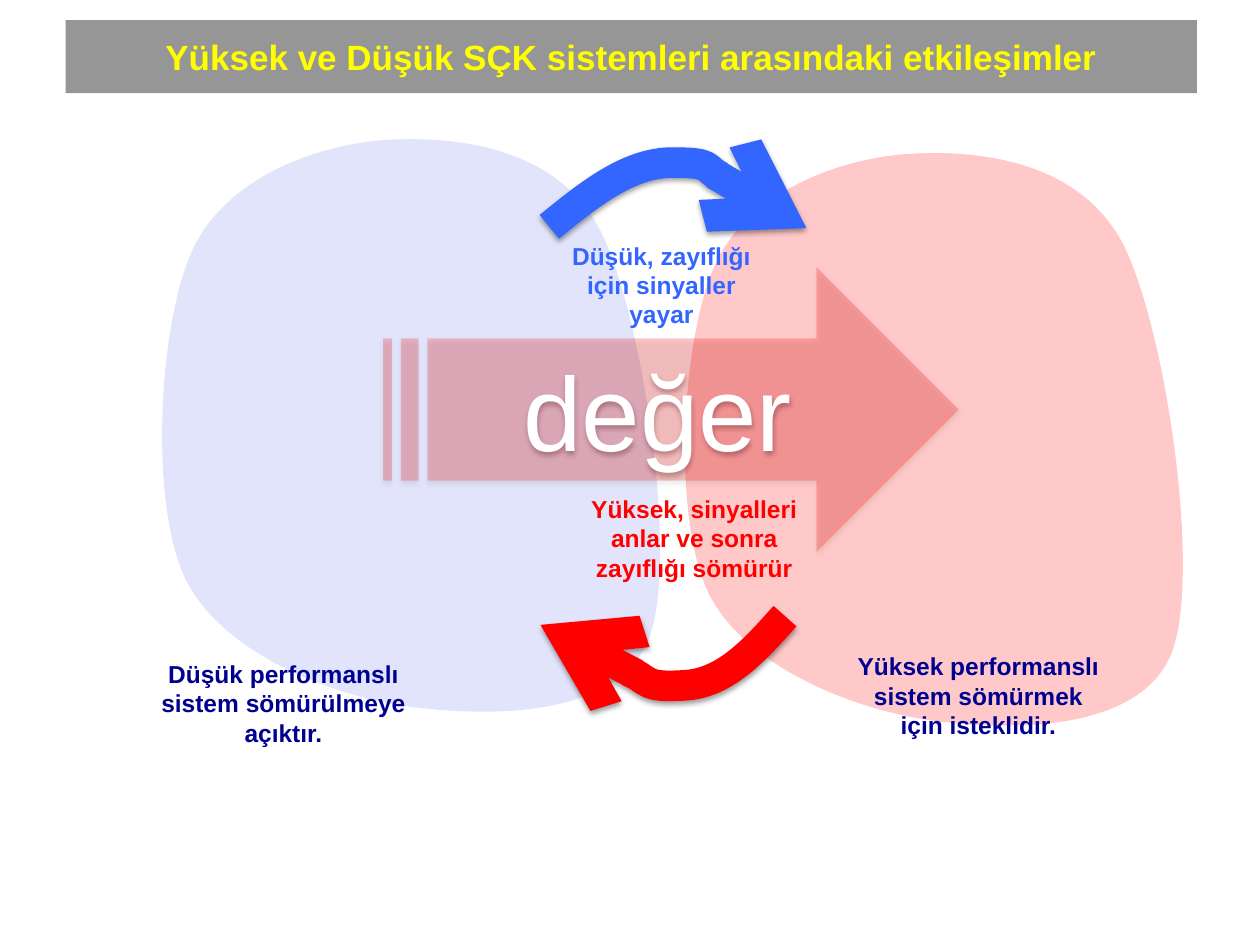
from lxml import etree
from pptx import Presentation
from pptx.dml.color import RGBColor
from pptx.enum.shapes import MSO_SHAPE
from pptx.enum.text import MSO_ANCHOR, MSO_AUTO_SIZE, PP_ALIGN
from pptx.oxml.ns import qn
from pptx.util import Pt

PX = 9144
RECT = MSO_SHAPE.RECTANGLE
STRIPED = MSO_SHAPE.STRIPED_RIGHT_ARROW
CENTER = PP_ALIGN.CENTER
MIDDLE = MSO_ANCHOR.MIDDLE
GROW = MSO_AUTO_SIZE.SHAPE_TO_FIT_TEXT

BLUE, RED, NAVY = "3366FF", "FF0000", "000090"
BLOB = [
    (308, 111), (361, 108), (441, 116), (476, 182), (510, 248), (539, 444),
    (515, 507), (490, 570), (388, 569), (326, 561), (265, 553), (176, 519),
    (147, 459), (118, 398), (126, 256), (153, 198), (180, 140), (254, 114),
    (308, 111),
]
SIGNAL = [(436, 180), (468, 154), (499, 129), (534, 129),
          (568, 129), (640, 181), (640, 181)]
EXPLOIT = [(623, 489), (599, 516), (575, 543), (542, 544),
           (510, 546), (429, 496), (429, 496)]


def color(code):
    """Turn a hex string into a colour."""
    return RGBColor.from_string(code)


def box(*sizes):
    """Turn px lengths into EMU."""
    return [size * PX for size in sizes]


def sub(parent, tag, **attrs):
    """Add a DrawingML child with the given attributes."""
    node = etree.SubElement(parent, qn(tag))
    for key, val in attrs.items():
        node.set(key, str(val))
    return node


def paint(shape, code, alpha=100):
    """Fill a shape without outline or shadow."""
    shape.shadow.inherit = False
    shape.line.fill.background()
    shape.fill.solid()
    shape.fill.fore_color.rgb = color(code)
    if alpha < 100:
        tint = shape._element.spPr.find(qn("a:solidFill"))[0]
        sub(tint, "a:alpha", val=alpha * 1000)


def shade(shape, dist, alpha):
    """Cast a soft black shadow straight down."""
    shape.shadow.inherit = False
    effects = shape._element.spPr.find(qn("a:effectLst"))
    cast = sub(effects, "a:outerShdw", blurRad=40000, dist=dist,
               dir=5400000, rotWithShape=0)
    tint = sub(cast, "a:srgbClr", val="000000")
    sub(tint, "a:alpha", val=alpha * 1000)


def curve(slide, points, close=False):
    """Draw a chain of cubic curves through its control points."""
    pen = slide.shapes.build_freeform(*points[0], scale=PX)
    pen.add_line_segments(points[1:], close=close)
    shape = pen.convert_to_shape()
    lines = list(shape._element.iter(qn("a:lnTo")))
    for i in range(0, len(lines), 3):
        bend = etree.Element(qn("a:cubicBezTo"))
        lines[i].addprevious(bend)
        for line in lines[i:i + 3]:
            bend.append(line[0])
            line.getparent().remove(line)
    return shape


def blob(slide, code, alpha, dx=0, dy=0):
    """Draw one rounded system area, moved by an offset."""
    points = [(x + dx, y + dy) for x, y in BLOB]
    paint(curve(slide, points, close=True), code, alpha)


def arrow(slide, points, code):
    """Draw a thick curved arrow with a shadow."""
    shape = curve(slide, points)
    shape.fill.background()
    shape.line.width = Pt(17.5)
    shape.line.fill.solid()
    shape.line.fill.fore_color.rgb = color(code)
    sub(shape._element.spPr.find(qn("a:ln")), "a:tailEnd", type="arrow")
    shade(shape, 20000, 38)


def write(shape, text, size=14, code=NAVY, bold=True):
    """Write centred text into a shape."""
    frame = shape.text_frame
    frame.word_wrap = True
    para = frame.paragraphs[0]
    para.alignment = CENTER
    run = para.add_run()
    run.text = text
    font = run.font
    font.name, font.size, font.bold = "Arial", Pt(size), bold
    font.color.rgb = color(code)
    return frame


def label(slide, place, text, **style):
    """Add a text box that grows with its text."""
    shape = slide.shapes.add_textbox(*box(*place))
    frame = write(shape, text, **style)
    frame.auto_size = GROW
    return frame


def panel(slide, kind, place, fill, text, alpha=100, **style):
    """Add a filled preset shape with text in its middle."""
    shape = slide.shapes.add_shape(kind, *box(*place))
    paint(shape, fill, alpha)
    write(shape, text, **style).vertical_anchor = MIDDLE
    return shape


def main():
    """Build the slide and save it."""
    deck = Presentation()
    deck.slide_width, deck.slide_height = box(1000, 750)
    slide = deck.slides.add_slide(deck.slide_layouts[6])

    blob(slide, "8995EF", 25)
    blob(slide, RED, 21, dx=415, dy=11)
    hint = label(slide, (441, 191, 168, 71),
                 "Düşük, zayıflığı için sinyaller yayar", code=BLUE)
    hint.margin_left = hint.margin_right = 0
    hint.margin_top = hint.margin_bottom = 0
    panel(slide, RECT, (52, 16, 898, 58), "969696",
          "Yüksek ve Düşük SÇK sistemleri arasındaki etkileşimler",
          size=20, code="FFFF00")
    label(slide, (97, 518, 256, 81),
          "Düşük performanslı sistem sömürülmeye açıktır.")
    label(slide, (666, 512, 221, 81),
          "Yüksek performanslı sistem sömürmek için isteklidir.")
    label(slide, (457, 387, 188, 81),
          "Yüksek, sinyalleri anlar ve sonra zayıflığı sömürür", code=RED)
    arrow(slide, SIGNAL, BLUE)
    arrow(slide, EXPLOIT, RED)
    value = panel(slide, STRIPED, (304, 212, 457, 226), RED, "değer",
                  alpha=21, size=60, code="FFFFFF", bold=False)
    shade(value, 23000, 35)
    deck.save("out.pptx")


if __name__ == "__main__":
    main()
